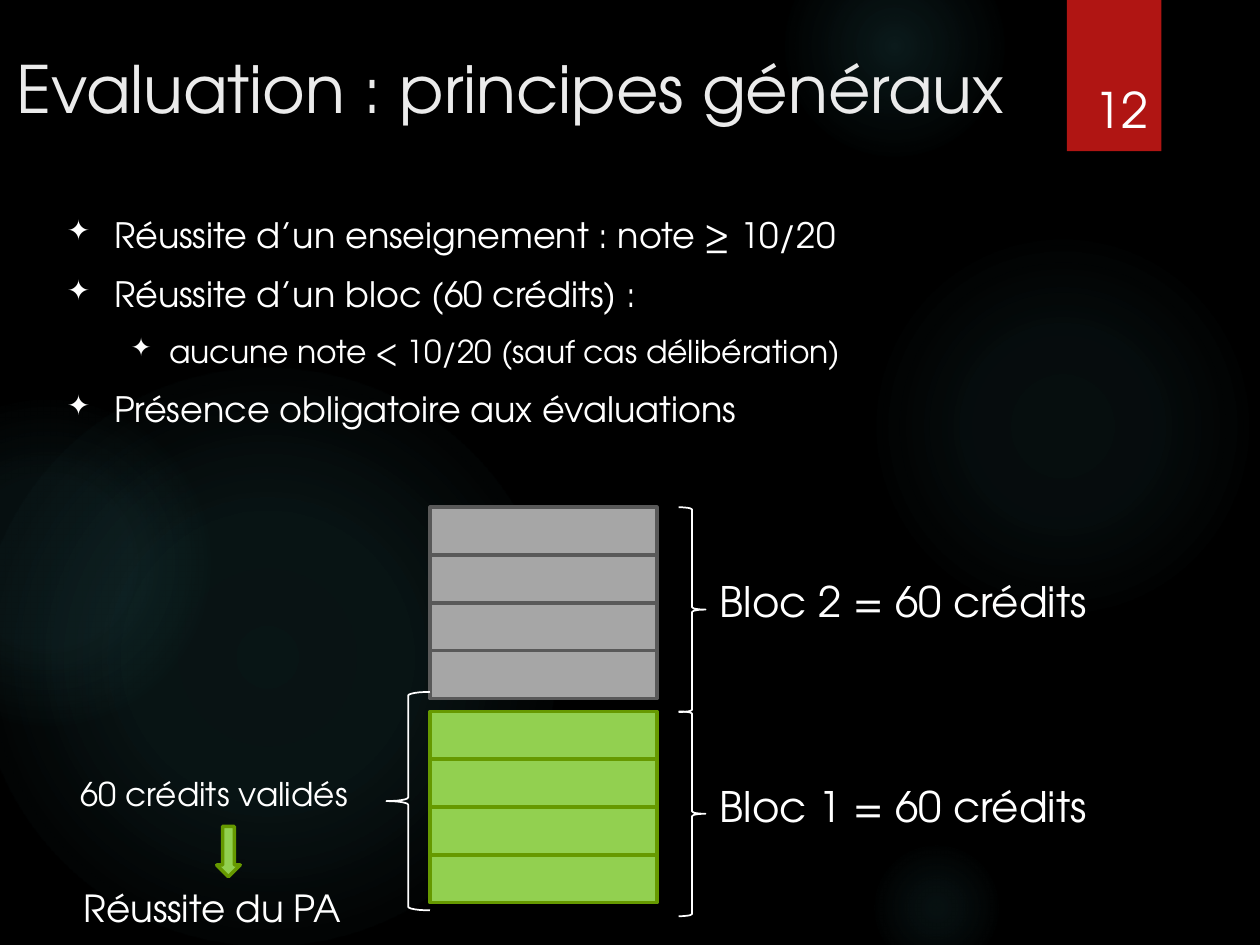
from lxml import etree
from pptx import Presentation
from pptx.dml.color import RGBColor
from pptx.enum.shapes import MSO_SHAPE
from pptx.enum.text import MSO_ANCHOR, PP_ALIGN
from pptx.oxml import parse_xml
from pptx.oxml.ns import nsdecls, qn
from pptx.util import Pt

RECTANGLE, ELLIPSE = MSO_SHAPE.RECTANGLE, MSO_SHAPE.OVAL
LEFT_BRACE, RIGHT_BRACE = MSO_SHAPE.LEFT_BRACE, MSO_SHAPE.RIGHT_BRACE
DOWN_ARROW = MSO_SHAPE.DOWN_ARROW
TOP, BOTTOM = MSO_ANCHOR.TOP, MSO_ANCHOR.BOTTOM
LEFT, CENTER = PP_ALIGN.LEFT, PP_ALIGN.CENTER

FONT = "TeX Gyre Adventor"
WHITE, RED, GLOW = "FFFFFF", "B01513", "50B9C1"
GREY, DARK_GREY = "A6A6A6", "595959"
GREEN, DARK_GREEN = "92D050", "669900"

# left, top, diameter, then (position, opacity) in percent for each stop
GLOWS = [
    (372.2, 99.4, 166.3, [(0, 7), (36, 6), (69, 0)]),
    (336.2, -27.4, 94.3, [(0, 14), (36, 7), (73, 0)]),
    (372.2, 360, 58.3, [(0, 9), (36, 5), (66, 0)]),
    (-9.4, 157.7, 247.7, [(0, 11), (36, 10), (75, 0)]),
    (-49.7, 171.4, 139.7, [(0, 8), (36, 8), (72, 0)]),
]

# text, size, text indent, hanging width, level
PRINCIPLES = [
    ("Réussite d’un enseignement : note ≥ 10/20", 15, 20.2, 20.2, 0),
    ("Réussite d’un bloc (60 crédits) :", 15, 20.2, 20.2, 0),
    ("aucune note < 10/20 (sauf cas délibération)", 13.5, 43.9, 16.6, 1),
    ("Présence obligatoire aux évaluations", 15, 20.2, 20.2, 0),
]

BLOCK_LEFT, BLOCK_WIDTH, ROW_HEIGHT, ROW_COUNT = 184.3, 97.2, 20.5, 4


def color(value):
    return RGBColor.from_string(value)


def add_shape(slide, kind, left, top, width, height, fill=None, line=None, line_width=1.5):
    shape = slide.shapes.add_shape(kind, Pt(left), Pt(top), Pt(width), Pt(height))
    shape.shadow.inherit = False
    if fill:
        shape.fill.solid()
        shape.fill.fore_color.rgb = color(fill)
    else:
        shape.fill.background()
    if line:
        shape.line.color.rgb = color(line)
        shape.line.width = Pt(line_width)
    else:
        shape.line.fill.background()
    return shape


def add_glow(slide, left, top, diameter, stops):
    """Add a circle with a radial gradient that fades out."""
    shape = add_shape(slide, ELLIPSE, left, top, diameter, diameter)
    stop_xml = "".join(
        f'<a:gs pos="{position * 1000}"><a:srgbClr val="{GLOW}">'
        f'<a:alpha val="{opacity * 1000}"/></a:srgbClr></a:gs>'
        for position, opacity in stops
    )
    gradient = parse_xml(
        f'<a:gradFill {nsdecls("a")} rotWithShape="1"><a:gsLst>{stop_xml}</a:gsLst>'
        '<a:path path="circle"><a:fillToRect l="50000" t="50000" r="50000" b="50000"/>'
        "</a:path></a:gradFill>"
    )
    properties = shape.element.spPr
    properties.replace(properties.find(qn("a:noFill")), gradient)


def format_text(paragraph, text, size, text_color=WHITE, align=LEFT):
    paragraph.text = text
    paragraph.alignment = align
    paragraph.font.name = FONT
    paragraph.font.size = Pt(size)
    paragraph.font.color.rgb = color(text_color)


def add_text_box(slide, left, top, width, height, wrap=True, anchor=TOP):
    box = slide.shapes.add_textbox(Pt(left), Pt(top), Pt(width), Pt(height))
    box.text_frame.word_wrap = wrap
    box.text_frame.vertical_anchor = anchor
    return box.text_frame


def add_text(slide, text, left, top, width, height, *, size, wrap=False, anchor=TOP, **text_format):
    frame = add_text_box(slide, left, top, width, height, wrap, anchor)
    format_text(frame.paragraphs[0], text, size, **text_format)


def add_bullet(paragraph, indent, hanging):
    properties = paragraph._p.get_or_add_pPr()
    properties.set("marL", str(Pt(indent)))
    properties.set("indent", str(-Pt(hanging)))
    bullet_color = etree.SubElement(properties, qn("a:buClr"))
    etree.SubElement(bullet_color, qn("a:srgbClr"), val=WHITE)
    etree.SubElement(properties, qn("a:buSzPct"), val="80000")
    etree.SubElement(properties, qn("a:buChar"), char="✦")


def add_principles(slide):
    frame = add_text_box(slide, 21.6, 87.8, 362.9, 110)
    for index, (text, size, indent, hanging, level) in enumerate(PRINCIPLES):
        paragraph = frame.add_paragraph() if index else frame.paragraphs[0]
        add_bullet(paragraph, indent, hanging)
        format_text(paragraph, text, size)
        paragraph.level = level
        if index:
            paragraph.space_before = Pt(7.5)


def add_block(slide, label, top, fill, line):
    """Add a stack of rows with its brace and label on the right."""
    for row in range(ROW_COUNT):
        add_shape(slide, RECTANGLE, BLOCK_LEFT, top + row * ROW_HEIGHT,
                  BLOCK_WIDTH, ROW_HEIGHT, fill, line)
    add_shape(slide, RIGHT_BRACE, 290.9, top, 11.5, 87.8, line=WHITE, line_width=0.75)
    add_text(slide, label, 301.3, top + 25.9, 172.1, 29, size=18)


def add_validation(slide):
    add_shape(slide, LEFT_BRACE, 165.6, 296.6, 18.7, 93.6, line=WHITE, line_width=0.75)
    add_text(slide, "60 crédits validés", 27.4, 328.3, 134.6, 24.5, size=14)
    add_shape(slide, DOWN_ARROW, 92.9, 354.2, 10.1, 21.6, GREEN, DARK_GREEN)
    add_text(slide, "Réussite du PA", 28.8, 375.8, 128.2, 28.8, size=16)


def main():
    presentation = Presentation()
    presentation.slide_width, presentation.slide_height = Pt(540), Pt(405)
    slide = presentation.slides.add_slide(presentation.slide_layouts[6])
    slide.background.fill.solid()
    slide.background.fill.fore_color.rgb = color("000000")

    for glow in GLOWS:
        add_glow(slide, *glow)
    add_shape(slide, RECTANGLE, 457.2, 0, 40.5, 64.8, RED)
    add_text(slide, "Evaluation : principes généraux", 0, 17.3, 496.1, 82.8,
             size=28, wrap=True, text_color="EBEBEB")
    add_text(slide, "12", 458.6, 17.3, 43.9, 45.4,
             size=21, wrap=True, anchor=BOTTOM, align=CENTER)
    add_principles(slide)
    add_block(slide, "Bloc 2 = 60 crédits", 217.4, GREY, DARK_GREY)
    add_block(slide, "Bloc 1 = 60 crédits", 304.9, GREEN, DARK_GREEN)
    add_validation(slide)
    presentation.save("out.pptx")


if __name__ == "__main__":
    main()
